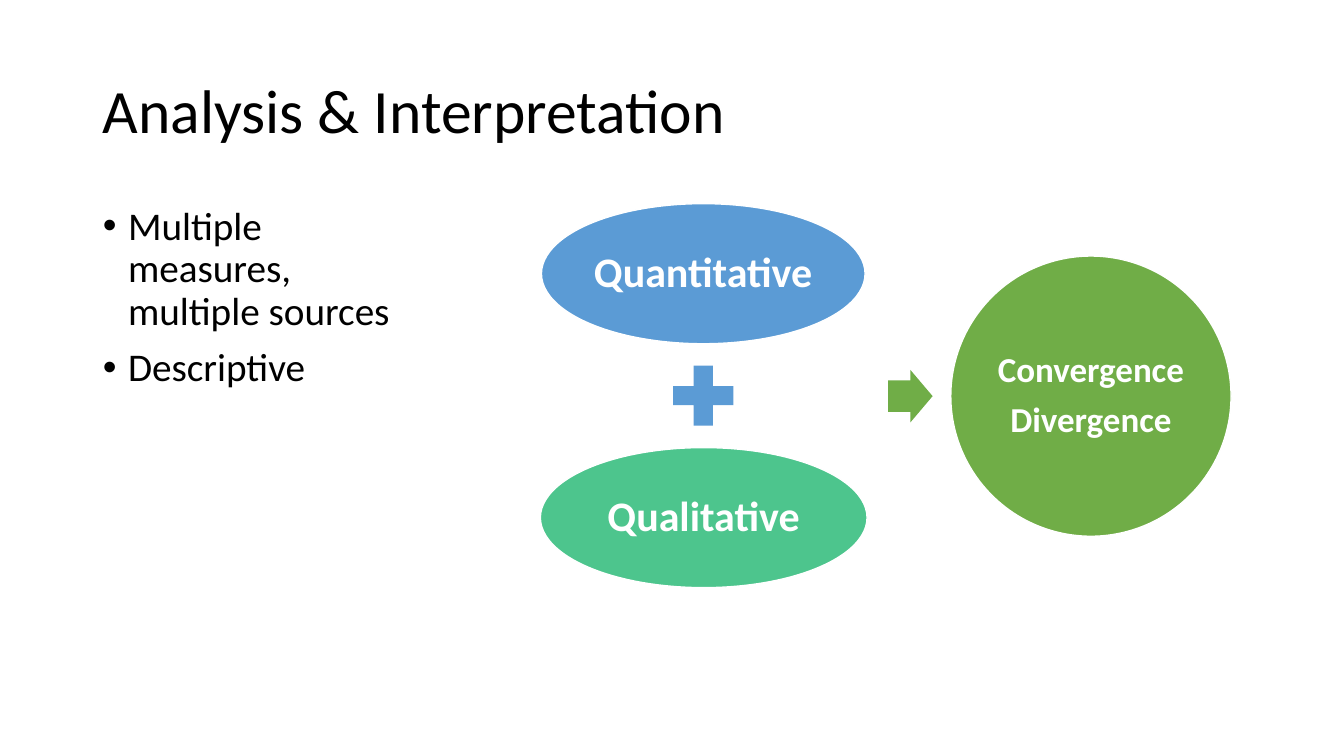
from dataclasses import dataclass

from pptx import Presentation
from pptx.dml.color import RGBColor
from pptx.enum.shapes import MSO_SHAPE
from pptx.enum.text import MSO_ANCHOR, MSO_AUTO_SIZE, PP_ALIGN
from pptx.shapes.autoshape import Shape
from pptx.slide import Slide
from pptx.util import Inches, Pt

BLACK = RGBColor(0x00, 0x00, 0x00)
WHITE = RGBColor(0xFF, 0xFF, 0xFF)
BLUE = RGBColor(0x5B, 0x9B, 0xD5)
TEAL = RGBColor(0x4D, 0xC5, 0x8D)
GREEN = RGBColor(0x70, 0xAD, 0x47)
FONT = "Calibri"


@dataclass(frozen=True)
class Figure:
    kind: MSO_SHAPE
    left: float
    top: float
    width: float
    height: float
    color: RGBColor
    label: str = ""
    size: float = 0
    inset: float = 0


FIGURES = [
    Figure(MSO_SHAPE.OVAL, 5.37, 2.02, 3.21, 1.39, BLUE, "Quantitative", 30, 0.04),
    Figure(MSO_SHAPE.MATH_PLUS, 6.57, 3.52, 0.81, 0.81, BLUE),
    Figure(MSO_SHAPE.OVAL, 5.36, 4.44, 3.24, 1.39, TEAL, "Qualitative", 30, 0.04),
    Figure(MSO_SHAPE.RIGHT_ARROW, 8.81, 3.67, 0.44, 0.52, GREEN),
    Figure(MSO_SHAPE.OVAL, 9.43, 2.54, 2.78, 2.78, GREEN,
           "Convergence\nDivergence", 25, 0.03),
]


def place(shape: Shape, left: float, top: float, width: float, height: float) -> None:
    shape.left, shape.top = Inches(left), Inches(top)
    shape.width, shape.height = Inches(width), Inches(height)


def write(shape: Shape, text: str, size: float, color: RGBColor,
          align: PP_ALIGN, anchor: MSO_ANCHOR, bold: bool = False,
          before: float = 0, after: float = 0) -> None:
    frame = shape.text_frame
    frame.text = text
    frame.word_wrap = True
    frame.auto_size = MSO_AUTO_SIZE.NONE
    frame.vertical_anchor = anchor
    for para in frame.paragraphs:
        para.alignment = align
        para.line_spacing = 0.9
        para.space_before, para.space_after = Pt(before), Pt(after)
        for span in para.runs:
            span.font.name = FONT
            span.font.size = Pt(size)
            span.font.bold = bold
            span.font.color.rgb = color


def draw_figure(page: Slide, figure: Figure) -> None:
    shape = page.shapes.add_shape(
        figure.kind, Inches(figure.left), Inches(figure.top),
        Inches(figure.width), Inches(figure.height))
    shape.shadow.inherit = False
    shape.fill.solid()
    shape.fill.fore_color.rgb = figure.color
    if figure.kind == MSO_SHAPE.RIGHT_ARROW:
        shape.adjustments[0] = 0.6
    if not figure.label:
        shape.line.fill.background()
        return
    shape.line.color.rgb = WHITE
    shape.line.width = Pt(1)
    frame = shape.text_frame
    frame.margin_left = frame.margin_right = Inches(figure.inset)
    frame.margin_top = frame.margin_bottom = Inches(figure.inset)
    write(shape, figure.label, figure.size, WHITE, PP_ALIGN.CENTER,
          MSO_ANCHOR.MIDDLE, bold=True, after=0.35 * figure.size)


def main() -> None:
    deck = Presentation()
    deck.slide_width, deck.slide_height = Inches(13.33), Inches(7.5)
    page = deck.slides.add_slide(deck.slide_layouts[1])

    title = page.shapes.title
    place(title, 0.92, 0.4, 11.5, 1.45)
    write(title, "Analysis & Interpretation", 44, BLACK, PP_ALIGN.LEFT,
          MSO_ANCHOR.MIDDLE)

    body = page.placeholders[1]
    place(body, 0.92, 2, 3.12, 4.97)
    write(body, "Multiple measures, multiple sources\nDescriptive", 28, BLACK,
          PP_ALIGN.LEFT, MSO_ANCHOR.TOP, before=10)
    for para in body.text_frame.paragraphs:
        properties = para._p.get_or_add_pPr()
        properties.set("marL", str(Inches(0.25)))
        properties.set("indent", str(-Inches(0.25)))

    for figure in FIGURES:
        draw_figure(page, figure)

    deck.save("out.pptx")


if __name__ == "__main__":
    main()
